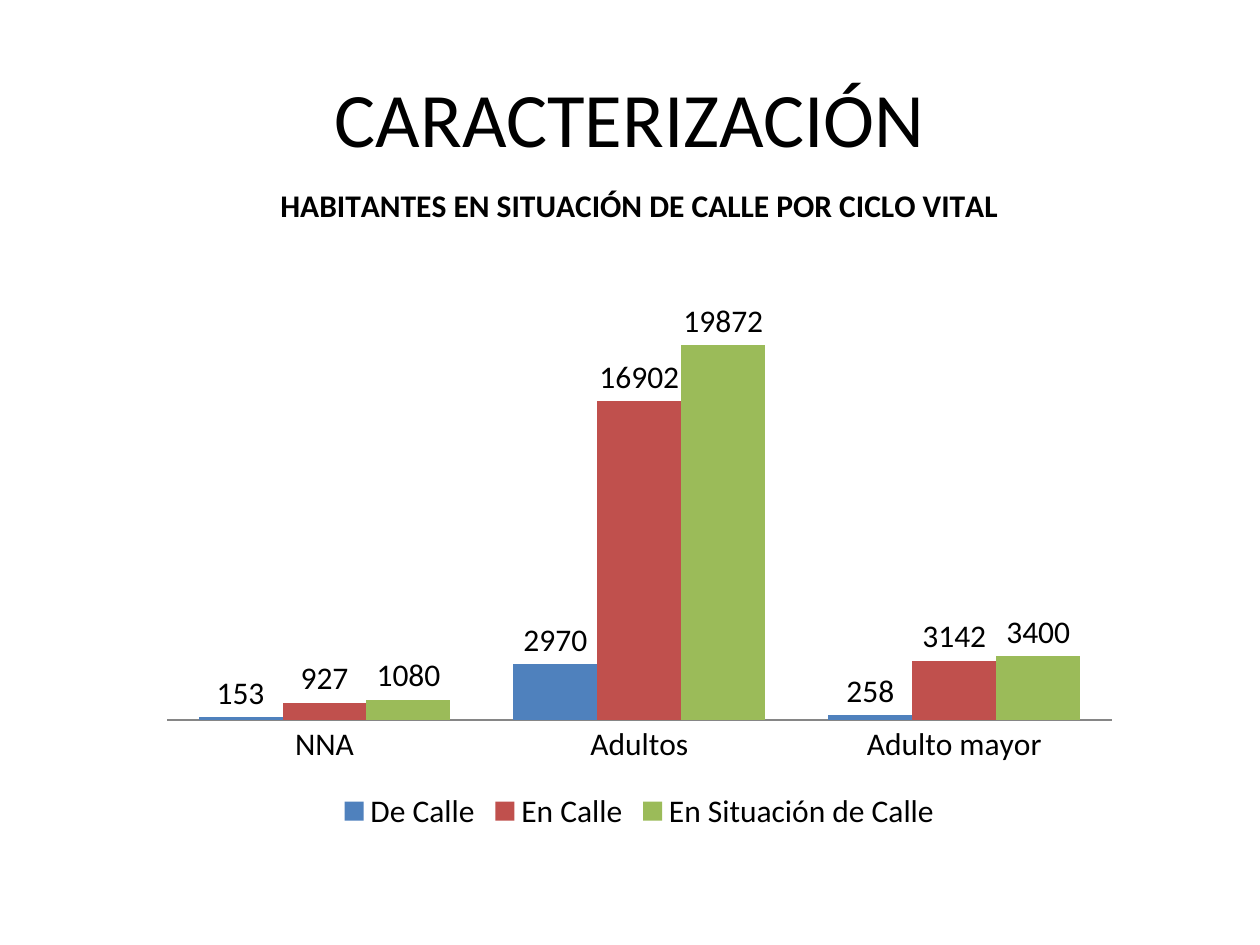
import pptx
import pptx.chart.data
import pptx.dml.color
import pptx.enum.chart
import pptx.enum.text
import pptx.util
from pptx.util import Inches


def color(value):
    return pptx.dml.color.RGBColor.from_string(value)


def style_font(font, size, bold=False):
    formats = {"name": "Calibri", "size": pptx.util.Pt(size), "bold": bold}
    for name, value in formats.items():
        setattr(font, name, value)
    font.color.rgb = color("000000")


deck = pptx.Presentation()
deck.slide_width, deck.slide_height = Inches(10), Inches(7.5)
page = deck.slides.add_slide(deck.slide_layouts[5])

# Chart data
categories = ["NNA", "Adultos", "Adulto mayor"]
groups = [
    ("De Calle", [153, 2970, 258], "4F81BD"),
    ("En Calle", [927, 16902, 3142], "C0504D"),
    ("En Situación de Calle", [1080, 19872, 3400], "9BBB59"),
]
data = pptx.chart.data.CategoryChartData()
data.categories = categories
for name, values, fill in groups:
    data.add_series(name, values)

# Column chart
chart = page.shapes.add_chart(
    pptx.enum.chart.XL_CHART_TYPE.COLUMN_CLUSTERED,
    Inches(1.17), Inches(1.25), Inches(7.81), Inches(5.39), data).chart
style_font(chart.font, 18)

# Chart title and legend
chart.has_title = True
para = chart.chart_title.text_frame.paragraphs[0]
span = para.add_run()
span.text = "HABITANTES EN SITUACIÓN DE CALLE POR CICLO VITAL"
style_font(span.font, 18, bold=True)
chart.chart_title.include_in_layout = False
chart.has_legend = True
chart.legend.position = pptx.enum.chart.XL_LEGEND_POSITION.BOTTOM
chart.legend.include_in_layout = False

# Axes
chart.value_axis.visible = False
chart.value_axis.has_major_gridlines = False
chart.category_axis.major_tick_mark = pptx.enum.chart.XL_TICK_MARK.NONE
chart.category_axis.format.line.color.rgb = color("868686")

# Columns and their labels
plot = chart.plots[0]
plot.gap_width = 75
plot.overlap = 0
plot.vary_by_categories = False
for series, (name, values, fill) in zip(plot.series, groups):
    series.format.fill.solid()
    series.format.fill.fore_color.rgb = color(fill)
    series.invert_if_negative = False
    labels = series.data_labels
    labels.show_value = True
    labels.position = pptx.enum.chart.XL_LABEL_POSITION.OUTSIDE_END
    style_font(labels.font, 18)

# Slide title
title = page.shapes.title
placement = {"left": 0.5, "top": 0.3, "width": 9, "height": 1.25}
for name, value in placement.items():
    setattr(title, name, Inches(value))
title.text_frame.vertical_anchor = pptx.enum.text.MSO_ANCHOR.MIDDLE
para = title.text_frame.paragraphs[0]
para.alignment = pptx.enum.text.PP_ALIGN.CENTER
span = para.add_run()
span.text = "CARACTERIZACIÓN"
style_font(span.font, 44)

deck.save("out.pptx")
